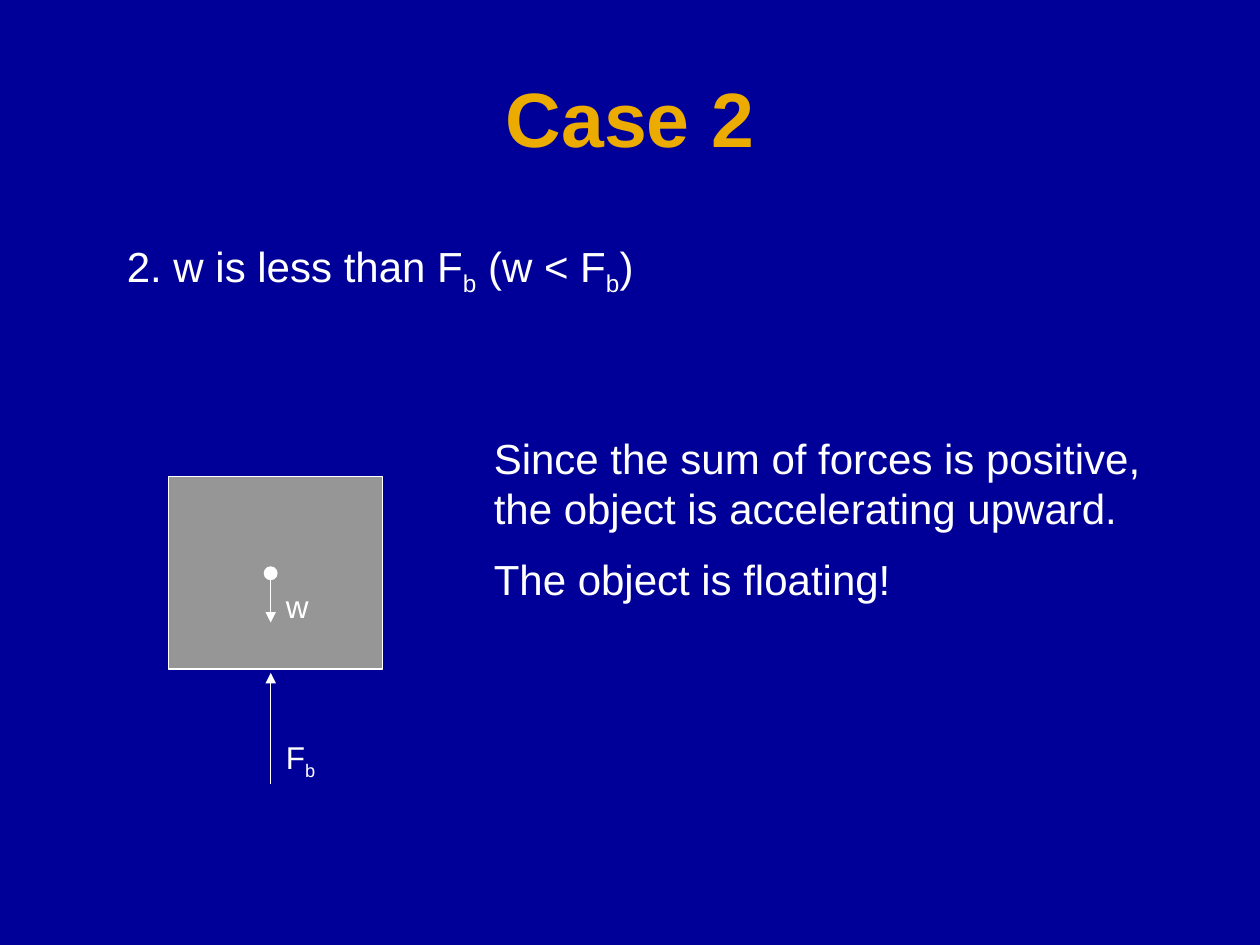
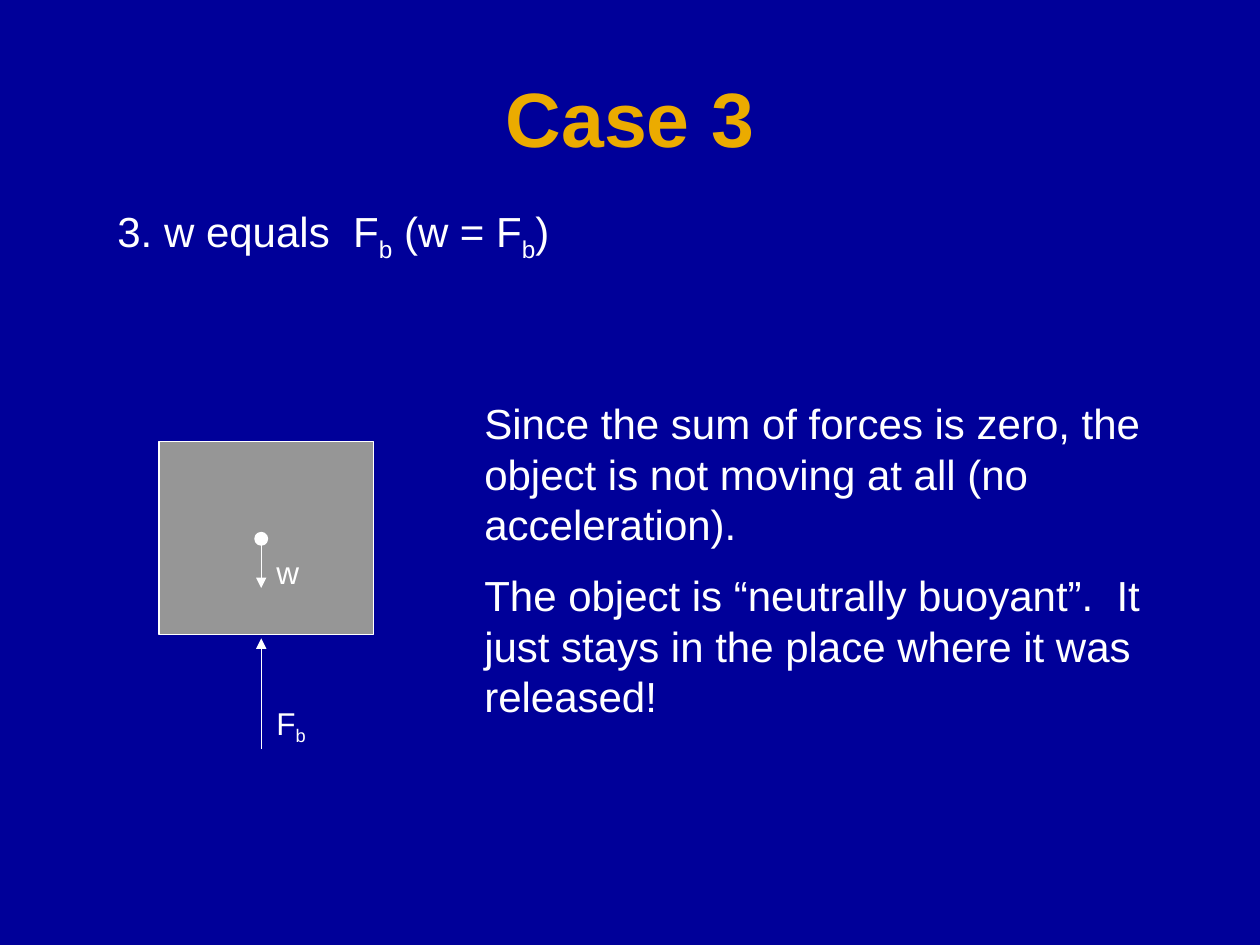
import pptx
import pptx.util
import pptx.dml.color
import pptx.enum.shapes
import pptx.enum.text
import pptx.oxml.ns
import lxml.etree

Pt = pptx.util.Pt
NAVY = pptx.dml.color.RGBColor(0x00, 0x00, 0x99)
GOLD = pptx.dml.color.RGBColor(0xEB, 0xAB, 0x00)
GRAY = pptx.dml.color.RGBColor(0x96, 0x96, 0x96)
WHITE = pptx.dml.color.RGBColor(0xFF, 0xFF, 0xFF)
RECTANGLE = pptx.enum.shapes.MSO_SHAPE.RECTANGLE
OVAL = pptx.enum.shapes.MSO_SHAPE.OVAL
FORCE_X = 58.4
CENTER_Y = 55.4
DOT_SIZE = 7.2

CASES = [
    ("Case 2", "2. w is less than F_b_ (w < F_b_)",
     ["Since the sum of forces is positive, the object is accelerating upward.",
      "The object is floating!"],
     96.3, 272.2, 108),
    ("Case 3", "3. w equals  F_b_ (w = F_b_)",
     ["Since the sum of forces is zero, the object is not moving at all (no acceleration).",
      "The object is “neutrally buoyant”.  It just stays in the place where it was released!"],
     90.9, 252.5, 194.4),
]


def write_text(text, paragraph, size=24, color=WHITE, bold=False, space_before=0,
               alignment=pptx.enum.text.PP_ALIGN.LEFT):
    paragraph.alignment = alignment
    paragraph.space_before = Pt(space_before)
    for index, part in enumerate(text.split("_")):
        run = paragraph.add_run()
        run.text = part
        run.font.name = "Arial"
        run.font.size = Pt(size)
        run.font.bold = bold
        run.font.color.rgb = color
        if index % 2:
            run._r.get_or_add_rPr().set("baseline", "-25000")


presentation = pptx.Presentation()
presentation.slide_width = Pt(720)
presentation.slide_height = Pt(540)
background = presentation.slide_master.background.fill
background.solid()
background.fore_color.rgb = NAVY

for title_text, heading, explanation, left, top, explanation_height in CASES:
    slide = presentation.slides.add_slide(presentation.slide_layouts[5])
    title = slide.shapes.title
    title.left, title.top, title.width, title.height = Pt(36), Pt(21.6), Pt(648), Pt(90)
    title.text_frame.vertical_anchor = pptx.enum.text.MSO_ANCHOR.MIDDLE
    write_text(title_text, title.text_frame.paragraphs[0], size=44, color=GOLD, bold=True,
               alignment=pptx.enum.text.PP_ALIGN.CENTER)

    for kind, x, y, width, height, color in [
        (RECTANGLE, 0, 0, 122.4, 110.2, GRAY),
        (OVAL, FORCE_X - DOT_SIZE / 2, CENTER_Y - DOT_SIZE / 2, DOT_SIZE, DOT_SIZE, WHITE),
    ]:
        shape = slide.shapes.add_shape(kind, Pt(left + x), Pt(top + y), Pt(width), Pt(height))
        shape.shadow.inherit = False
        shape.fill.solid()
        shape.fill.fore_color.rgb = color
        shape.line.color.rgb = WHITE
        shape.line.width = Pt(0.75)

    force_x = Pt(left + FORCE_X)
    for start_y, end_y in [(175.6, 112.3), (CENTER_Y, 83.5)]:
        arrow = slide.shapes.add_connector(
            pptx.enum.shapes.MSO_CONNECTOR.STRAIGHT,
            force_x, Pt(top + start_y), force_x, Pt(top + end_y))
        arrow.line.color.rgb = WHITE
        arrow.line.width = Pt(0.75)
        line = arrow.line._get_or_add_ln()
        lxml.etree.SubElement(line, pptx.oxml.ns.qn("a:tailEnd"), type="triangle")
        lxml.etree.SubElement(arrow._element.spPr, pptx.oxml.ns.qn("a:effectLst"))

    for texts, x, y, width, height, size in [
        (["F_b_"], 60, 146, 37.4, 28.8, 18),
        (["w"], 60, 60, 37.4, 28.8, 18),
        (explanation, 178.8, -28.8, 413.3, explanation_height, 24),
        ([heading], -30.9, -138.4, 604.8, 36, 24),
    ]:
        box = slide.shapes.add_textbox(Pt(left + x), Pt(top + y), Pt(width), Pt(height))
        frame = box.text_frame
        frame.word_wrap = True
        for index, text in enumerate(texts):
            paragraph = frame.add_paragraph() if index else frame.paragraphs[0]
            write_text(text, paragraph, size=size, space_before=12 if index else 0)

presentation.save("out.pptx")
